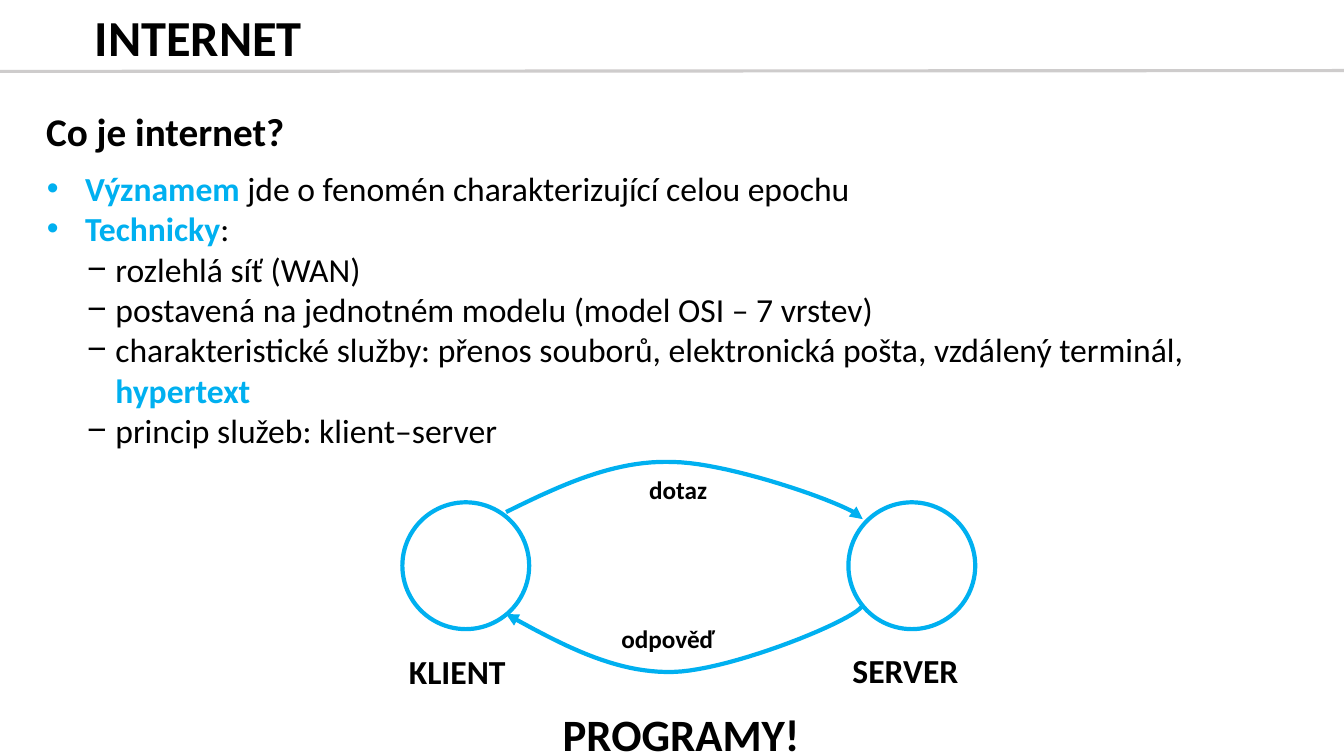
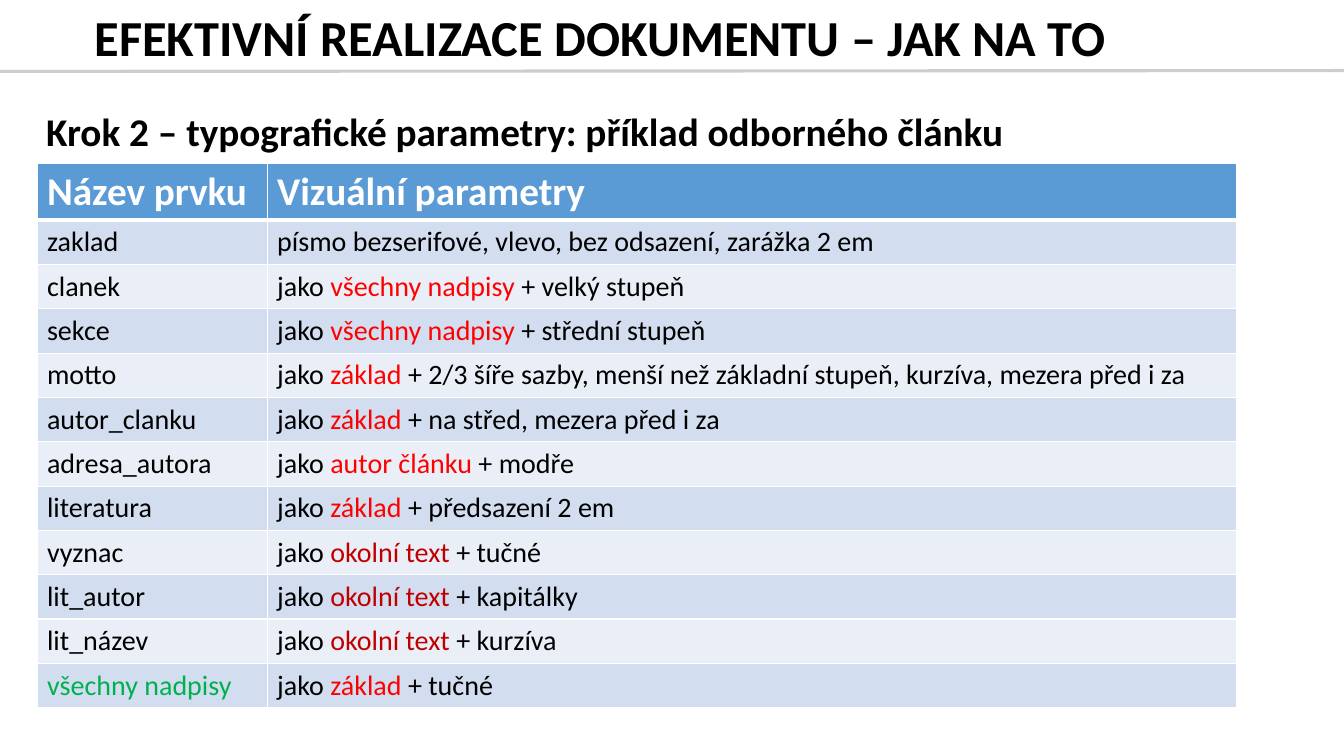
from dataclasses import dataclass

from lxml.etree import SubElement
from pptx import Presentation
from pptx.dml.color import RGBColor
from pptx.enum.shapes import MSO_CONNECTOR as Connector, MSO_SHAPE as Preset
from pptx.enum.text import MSO_ANCHOR as Anchor
from pptx.oxml.ns import qn
from pptx.util import Emu, Inches, Pt

COLUMNS, ROWS = 160, 90
WIDTH, HEIGHT = Inches(13.33), Inches(7.5)
FONT = "Calibri"
BLACK, WHITE, GREY = "000000", "FFFFFF", "CECCCC"
BLUE, RED, DARK_RED, GREEN = "00B0F0", "FF0000", "C00000", "00B050"
HEADER_FILL, BAND_FILLS = "5B9BD5", ("D2DEEF", "EAEFF7")


@dataclass
class Box:
    left: float
    top: float
    width: float
    height: float

    def inner(self, left, top, width, height):
        return Box(self.left + left, self.top + top, width, height)

    def point(self, x, y):
        return across(self.left + x), down(self.top + y)

    def place(self):
        return (*self.point(0, 0), across(self.width), down(self.height))


TITLE = Box(0, 1.5, 157.5, 6.5)
SUBHEADING = Box(4.3, 12.8, 143, 6.6)
CONTENT = Box(4.4, 19.4, 142.8, 63.4)
DIAGRAM = Box(47.9, 55, 68.2, 36)


def across(columns):
    return Emu(round(WIDTH * columns / COLUMNS))


def down(rows):
    return Emu(round(HEIGHT * rows / ROWS))


def color(value):
    return RGBColor.from_string(value)


def add_runs(paragraph, runs, size):
    for text, shade, bold in runs:
        run = paragraph.add_run()
        run.text = text
        run.font.name = FONT
        run.font.size = Pt(size)
        run.font.bold = bold
        run.font.color.rgb = color(shade)


def add_text(slide, box, text, size):
    frame = slide.shapes.add_textbox(*box.place()).text_frame
    frame.word_wrap = True
    add_runs(frame.paragraphs[0], [(text, BLACK, True)], size)
    return frame


def style_line(line, shade, width):
    line.color.rgb = color(shade)
    line.width = Pt(width)


def add_heading(slide, title, subheading):
    rule = slide.shapes.add_connector(
        Connector.STRAIGHT, 0, down(8.5), WIDTH, down(8.4))
    style_line(rule.line, GREY, 2.25)
    SubElement(rule._element.spPr, qn("a:effectLst"))
    title_frame = add_text(slide, TITLE, title, 36)
    title_frame.margin_left = across(11.28)
    title_frame.vertical_anchor = Anchor.MIDDLE
    subheading_frame = add_text(slide, SUBHEADING, subheading, 28)
    for frame in (title_frame, subheading_frame):
        frame.paragraphs[0].line_spacing = 0.9


def add_bullets(slide, box, items):
    frame = slide.shapes.add_textbox(*box.place()).text_frame
    frame.word_wrap = True
    levels = ((4.56, 4.56, "•"), (8.16, 3.36, "−"))
    for index, (level, runs) in enumerate(items):
        paragraph = frame.add_paragraph() if index else frame.paragraphs[0]
        paragraph.level = level
        margin, hanging, mark = levels[level]
        properties = paragraph._p.get_or_add_pPr()
        properties.set("marL", str(across(margin)))
        properties.set("indent", str(-across(hanging)))
        SubElement(properties, qn("a:buFont"), typeface="Arial")
        SubElement(properties, qn("a:buChar"), char=mark)
        add_runs(paragraph, runs, 24)


def add_node(slide, box):
    node = slide.shapes.add_shape(Preset.OVAL, *box.place())
    node.shadow.inherit = False
    node.fill.solid()
    node.fill.fore_color.rgb = color(WHITE)
    style_line(node.line, BLUE, 3)


def curve_points(start, control_1, control_2, end, steps=24):
    for step in range(1, steps + 1):
        t = step / steps
        weights = ((1 - t) ** 3, 3 * t * (1 - t) ** 2, 3 * t * t * (1 - t), t ** 3)
        yield tuple(
            sum(weight * value for weight, value in zip(weights, axis))
            for axis in zip(start, control_1, control_2, end))


def add_arc(slide, box, controls):
    builder = slide.shapes.build_freeform(*box.point(*controls[0]))
    points = [point for first in (0, 3)
              for point in curve_points(*controls[first:first + 4])]
    builder.add_line_segments([box.point(*point) for point in points], close=False)
    arc = builder.convert_to_shape()
    arc.shadow.inherit = False
    arc.fill.background()
    style_line(arc.line, BLUE, 3)
    outline = arc._element.spPr.find(qn("a:ln"))
    SubElement(outline, qn("a:tailEnd"), type="triangle")


def add_client_server(slide, box):
    diameter = 15.1
    for left in (0, box.width - diameter):
        add_node(slide, box.inner(left, 4.8, diameter, diameter))
    arc_columns = (12.34, 18.7, 25.2, 32.26, 39.3, 54.5, 54.8)
    request = list(zip(arc_columns, (5.96, 2.84, -0.28, 0, 0.1, 5.5, 6.8)))
    response = list(zip(arc_columns, (18.1, 21.6, 25.2, 25, 24.8, 18.6, 17)))
    add_arc(slide, box, request)
    add_arc(slide, box, response[::-1])
    for text, size, place in (
        ("dotaz", 18, (28.2, 0.9, 10.8, 4.8)),
        ("odpověď", 18, (24.9, 18.6, 17.2, 4.8)),
        ("KLIENT", 24, (-0.4, 21.9, 14.9, 6)),
        ("SERVER", 24, (52.4, 21.8, 15.8, 6)),
        ("PROGRAMY!", 32, (17.9, 28.6, 31.3, 7.7)),
    ):
        add_text(slide, box.inner(*place), text, size)


def set_borders(cell, widths):
    properties = cell._tc.get_or_add_tcPr()
    for side, width in zip("LRTB", widths):
        border = SubElement(properties, qn(f"a:ln{side}"), w=str(Pt(width)))
        fill = SubElement(border, qn("a:solidFill"))
        SubElement(fill, qn("a:srgbClr"), val=WHITE)


def add_parameter_table(slide, box, header, body):
    rows = [header, *body]
    table = slide.shapes.add_table(len(rows), 2, *box.place()).table
    table.first_row = table.horz_banding = False
    name_width = 27.4
    for column, width in zip(table.columns, (name_width, box.width - name_width)):
        column.width = across(width)
    for row_index, row in enumerate(rows):
        is_header = row_index == 0
        table.rows[row_index].height = down(6.72 if is_header else 5.28)
        fill = HEADER_FILL if is_header else BAND_FILLS[(row_index - 1) % 2]
        top = 3 if row_index == 1 else 1
        bottom = 3 if is_header else 1
        for column_index, runs in enumerate(row):
            cell = table.cell(row_index, column_index)
            set_borders(cell, (1, 1, top, bottom))
            cell.fill.solid()
            cell.fill.fore_color.rgb = color(fill)
            add_runs(cell.text_frame.paragraphs[0], runs, 28 if is_header else 20)


def plain(text, shade=BLACK):
    return (text, shade, False)


def strong(text, shade=BLUE):
    return (text, shade, True)


def derived(name, base, rest, base_color=RED, name_color=BLACK):
    return ([plain(name, name_color)],
            [plain("jako "), plain(base, base_color), plain(rest)])


def build_internet(slide):
    add_heading(slide, "INTERNET", "Co je internet?")
    add_bullets(slide, CONTENT, [
        (0, [strong("Významem"), plain(" jde o fenomén charakterizující celou epochu")]),
        (0, [strong("Technicky"), plain(":")]),
        (1, [plain("rozlehlá síť (WAN)")]),
        (1, [plain("postavená na jednotném modelu (model OSI – 7 vrstev)")]),
        (1, [plain("charakteristické služby: přenos souborů, elektronická pošta, "
                   "vzdálený terminál, "), strong("hypertext")]),
        (1, [plain("princip služeb: klient–server")]),
    ])
    add_client_server(slide, DIAGRAM)


def build_typography(slide):
    add_heading(slide, "EFEKTIVNÍ REALIZACE DOKUMENTU – JAK NA TO",
                "Krok 2 – typografické parametry: příklad odborného článku")
    header = ([strong("Název prvku", WHITE)], [strong("Vizuální parametry", WHITE)])
    add_parameter_table(slide, CONTENT, header, [
        ([plain("zaklad")],
         [plain("písmo bezserifové, vlevo, bez odsazení, zarážka 2 em")]),
        derived("clanek", "všechny nadpisy", " + velký stupeň"),
        derived("sekce", "všechny nadpisy", " + střední stupeň"),
        derived("motto", "základ", " + 2/3 šíře sazby, menší než základní stupeň, "
                "kurzíva, mezera před i za"),
        derived("autor_clanku", "základ", " + na střed, mezera před i za"),
        derived("adresa_autora", "autor článku", " + modře"),
        derived("literatura", "základ", " + předsazení 2 em"),
        derived("vyznac", "okolní text", " + tučné", DARK_RED),
        derived("lit_autor", "okolní text", " + kapitálky", DARK_RED),
        derived("lit_název", "okolní text", " + kurzíva", DARK_RED),
        derived("všechny nadpisy", "základ", " + tučné", name_color=GREEN),
    ])


def main():
    presentation = Presentation()
    presentation.slide_width, presentation.slide_height = WIDTH, HEIGHT
    for build in (build_internet, build_typography):
        build(presentation.slides.add_slide(presentation.slide_layouts[6]))
    presentation.save("out.pptx")


if __name__ == "__main__":
    main()
